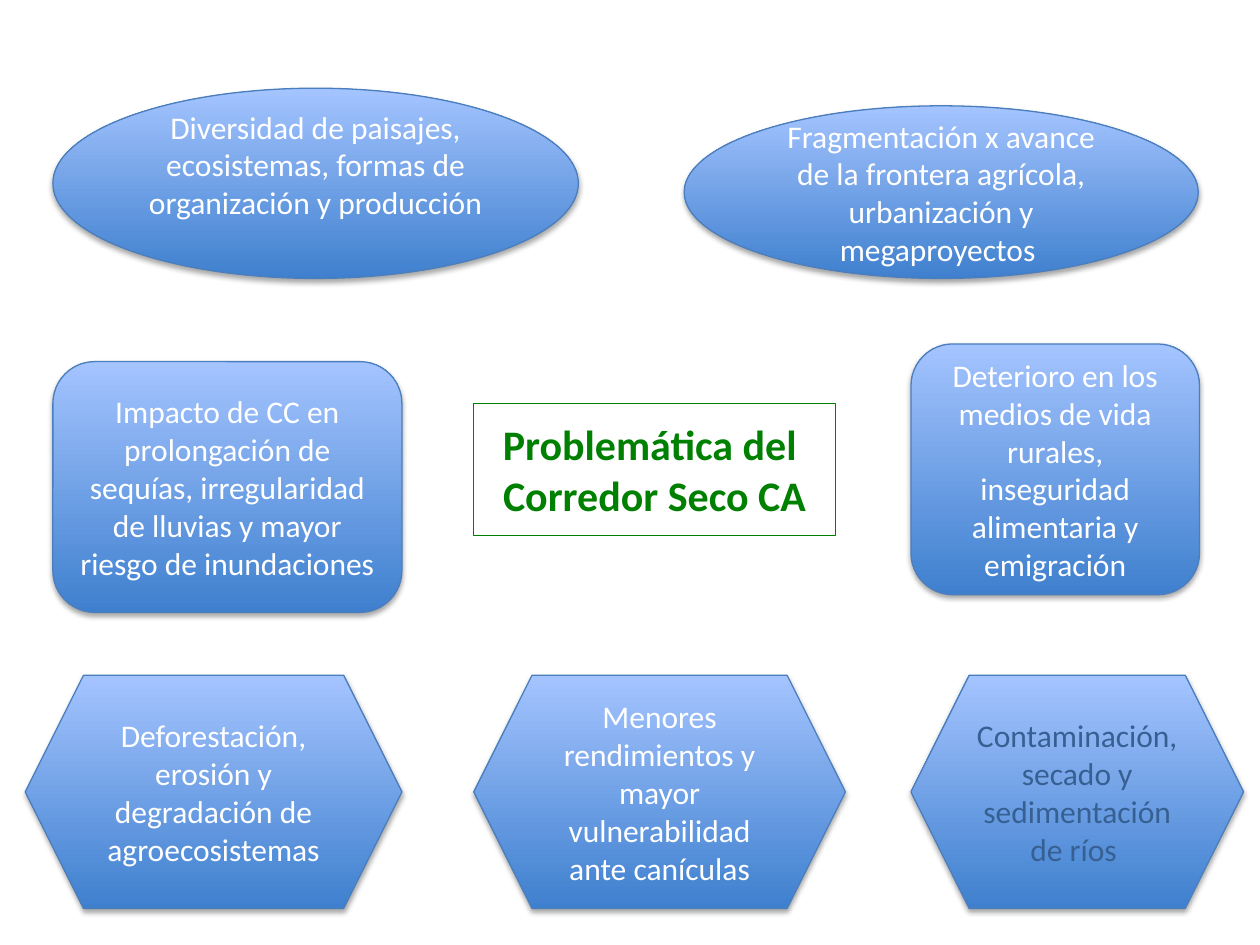
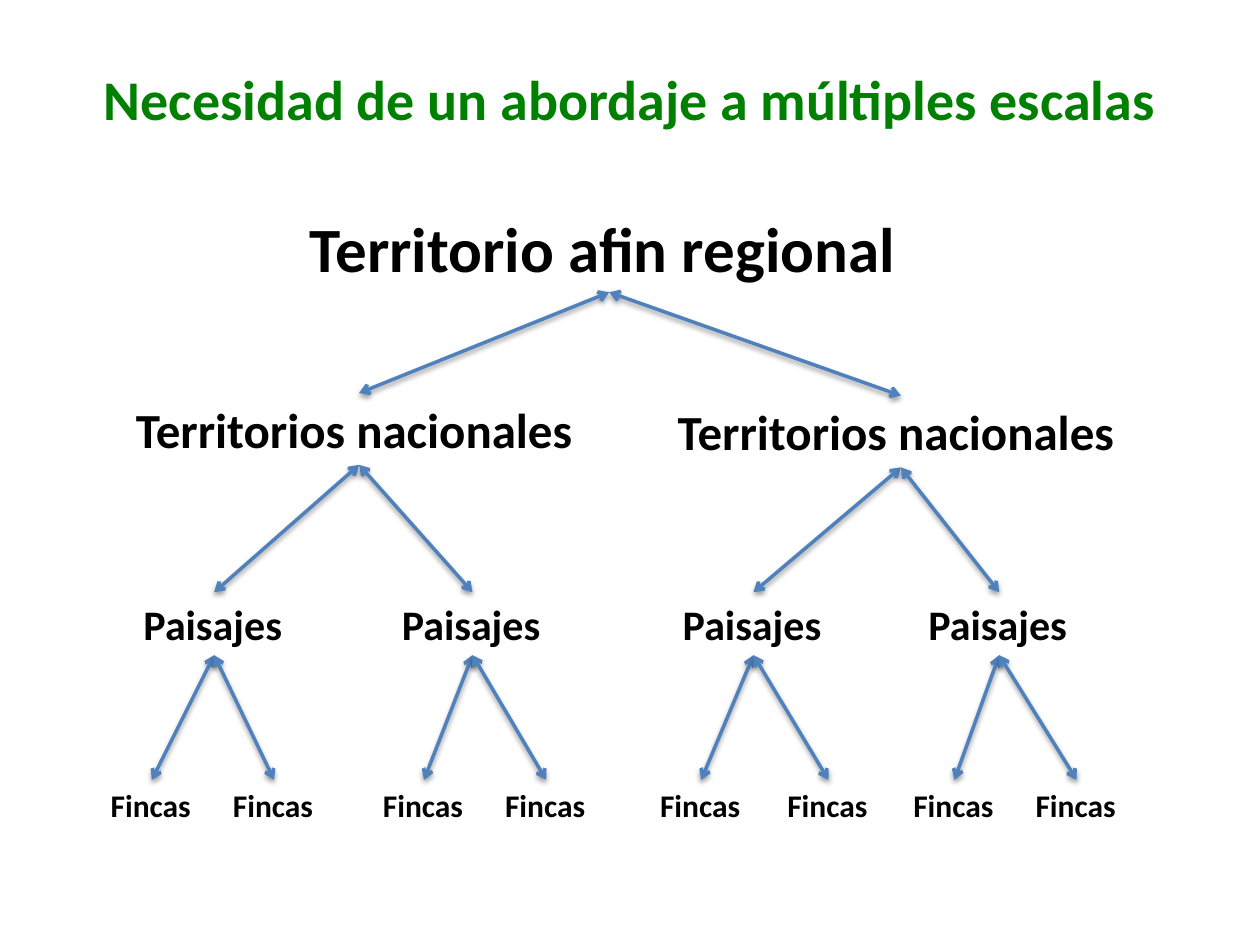
from lxml import etree
from pptx import Presentation
from pptx.dml.color import RGBColor
from pptx.enum.shapes import MSO_CONNECTOR, MSO_SHAPE
from pptx.enum.text import MSO_ANCHOR, MSO_AUTO_SIZE, PP_ALIGN
from pptx.oxml.ns import qn
from pptx.util import Inches, Pt

ELLIPSE, ROUNDED, HEXAGON = MSO_SHAPE.OVAL, MSO_SHAPE.ROUNDED_RECTANGLE, MSO_SHAPE.HEXAGON
STRAIGHT = MSO_CONNECTOR.STRAIGHT
MIDDLE, TOP, CENTER, LEFT = MSO_ANCHOR.MIDDLE, MSO_ANCHOR.TOP, PP_ALIGN.CENTER, PP_ALIGN.LEFT
GROW = MSO_AUTO_SIZE.SHAPE_TO_FIT_TEXT
TOP_SIDE, BOTTOM_SIDE = 0, 2

COLORS = {
    "title": "008000", "text": "000000", "white": "FFFFFF", "muted": "376092",
    "gradient_bottom": "3F80CE", "gradient_top": "A4C4FF",
    "outline": "4B7EBC", "arrow": "4F81BD", "shadow": "000000",
}
FONT = "Calibri"

# Causes around the centre: shape, box, text, and any differing format
PROBLEMS = [
    (ELLIPSE, (0.42, 0.7, 4.17, 1.51),
     "Diversidad de paisajes, ecosistemas, formas de organización y producción",
     {"margin_bottom": Inches(0.35)}),
    (ELLIPSE, (5.43, 0.84, 4.08, 1.37),
     "Fragmentación x avance de la frontera agrícola, urbanización y megaproyectos ", {}),
    (ROUNDED, (0.42, 2.87, 2.77, 1.99),
     "Impacto de CC en prolongación de sequías, irregularidad de lluvias y mayor "
     "riesgo de inundaciones", {}),
    (ROUNDED, (7.23, 2.73, 2.29, 1.99),
     "Deterioro en los medios de vida rurales, inseguridad alimentaria y emigración", {}),
    (HEXAGON, (0.2, 5.36, 2.99, 1.85),
     "Deforestación, erosión y degradación de agroecosistemas", {}),
    (HEXAGON, (3.76, 5.36, 2.95, 1.85),
     "Menores rendimientos y mayor vulnerabilidad ante canículas", {}),
    (HEXAGON, (7.23, 5.36, 2.64, 1.85),
     "Contaminación, secado y sedimentación de ríos ", {"color": "muted"}),
]

# Scales from region to farm: text, size, box width and height, corners;
# every pair of boxes hangs from one box of the scale above
SCALES = [
    ("Territorio afin regional", 36, 4.95, 0.71, [(2.36, 1.61)]),
    ("Territorios nacionales", 28, 3.74, 0.57, [(0.98, 3.12), (5.28, 3.14)]),
    ("Paisajes", 24, 1.32, 0.5, [(left, 4.7) for left in (1.04, 3.09, 5.32, 7.27)]),
    ("Fincas", 18, 0.85, 0.4,
     [(left, 6.19) for left in (0.78, 1.75, 2.94, 3.91, 5.14, 6.15, 7.15, 8.12)]),
]


def rgb(name):
    return RGBColor.from_string(COLORS[name])


def apply(target, values):
    for attribute, value in values.items():
        setattr(target, attribute, value)


class Deck:
    def __init__(self):
        self.prs = Presentation()
        apply(self.prs, {"slide_width": Inches(10), "slide_height": Inches(7.5)})
        self.slide = None

    def new_slide(self):
        self.slide = self.prs.slides.add_slide(self.prs.slide_layouts[6])

    def set_text(self, shape, text, size, color, bold=False, align=CENTER, **frame_format):
        frame = shape.text_frame
        apply(frame, {"word_wrap": True, "vertical_anchor": MIDDLE, **frame_format})
        frame.text = text
        for paragraph in frame.paragraphs:
            paragraph.alignment = align
            for run in paragraph.runs:
                apply(run.font, {"name": FONT, "size": Pt(size), "bold": bold})
                run.font.color.rgb = rgb(color)

    def outline(self, shape, color, width):
        shape.line.color.rgb = rgb(color)
        shape.line.width = Pt(width)

    def cast_shadow(self, effects, distance, opacity):
        shadow = etree.SubElement(effects, qn("a:outerShdw"), {
            "blurRad": str(Pt(3.1)), "dist": str(Pt(distance)),
            "dir": "5400000", "rotWithShape": "0"})
        tint = etree.SubElement(shadow, qn("a:srgbClr"), val=COLORS["shadow"])
        etree.SubElement(tint, qn("a:alpha"), val=str(opacity * 1000))

    def label(self, box, text, size, color="text", **text_format):
        holder = self.slide.shapes.add_textbox(*map(Inches, box))
        self.set_text(holder, text, size, color, bold=True, **text_format)
        return holder

    def title(self, box, text, size):
        return self.label(box, text, size, "title")

    def bubble(self, kind, box, text, color="white", **frame_format):
        bubble = self.slide.shapes.add_shape(kind, *map(Inches, box))
        bubble.fill.gradient()
        bubble.fill.gradient_angle = 90
        for stop, name in zip(bubble.fill.gradient_stops, ("gradient_bottom", "gradient_top")):
            stop.color.rgb = rgb(name)
        self.outline(bubble, "outline", 0.75)
        bubble.shadow.inherit = False
        self.cast_shadow(bubble._element.spPr.find(qn("a:effectLst")), 1.8, 35)
        self.set_text(bubble, text, 18, color, **frame_format)

    def double_arrow(self, upper, lower):
        arrow = self.slide.shapes.add_connector(STRAIGHT, 0, 0, 0, 0)
        arrow.begin_connect(upper, BOTTOM_SIDE)
        arrow.end_connect(lower, TOP_SIDE)
        self.outline(arrow, "arrow", 2)
        properties = arrow._element.spPr
        for end in ("a:headEnd", "a:tailEnd"):
            etree.SubElement(properties.find(qn("a:ln")), qn(end), type="arrow")
        self.cast_shadow(etree.SubElement(properties, qn("a:effectLst")), 1.6, 38)


def build_problems(deck):
    deck.new_slide()
    centre = deck.title((3.76, 3.2, 2.87, 1.05), "Problemática del \vCorredor Seco CA", 24)
    deck.outline(centre, "title", 0.75)
    for kind, box, text, changes in PROBLEMS:
        deck.bubble(kind, box, text, **changes)


def build_scales(deck):
    deck.new_slide()
    deck.title((0.5, 0.3, 9, 0.95), "Necesidad de un abordaje a múltiples escalas", 32)
    levels = [
        [deck.label((left, top, width, height), text, size, align=LEFT, word_wrap=False,
                    vertical_anchor=TOP, auto_size=GROW) for left, top in corners]
        for text, size, width, height, corners in SCALES
    ]
    # Arrows between neighbouring scales
    for parents, children in zip(levels, levels[1:]):
        for index, child in enumerate(children):
            deck.double_arrow(parents[index // 2], child)


def main():
    deck = Deck()
    build_problems(deck)
    build_scales(deck)
    deck.prs.save("out.pptx")


if __name__ == "__main__":
    main()
